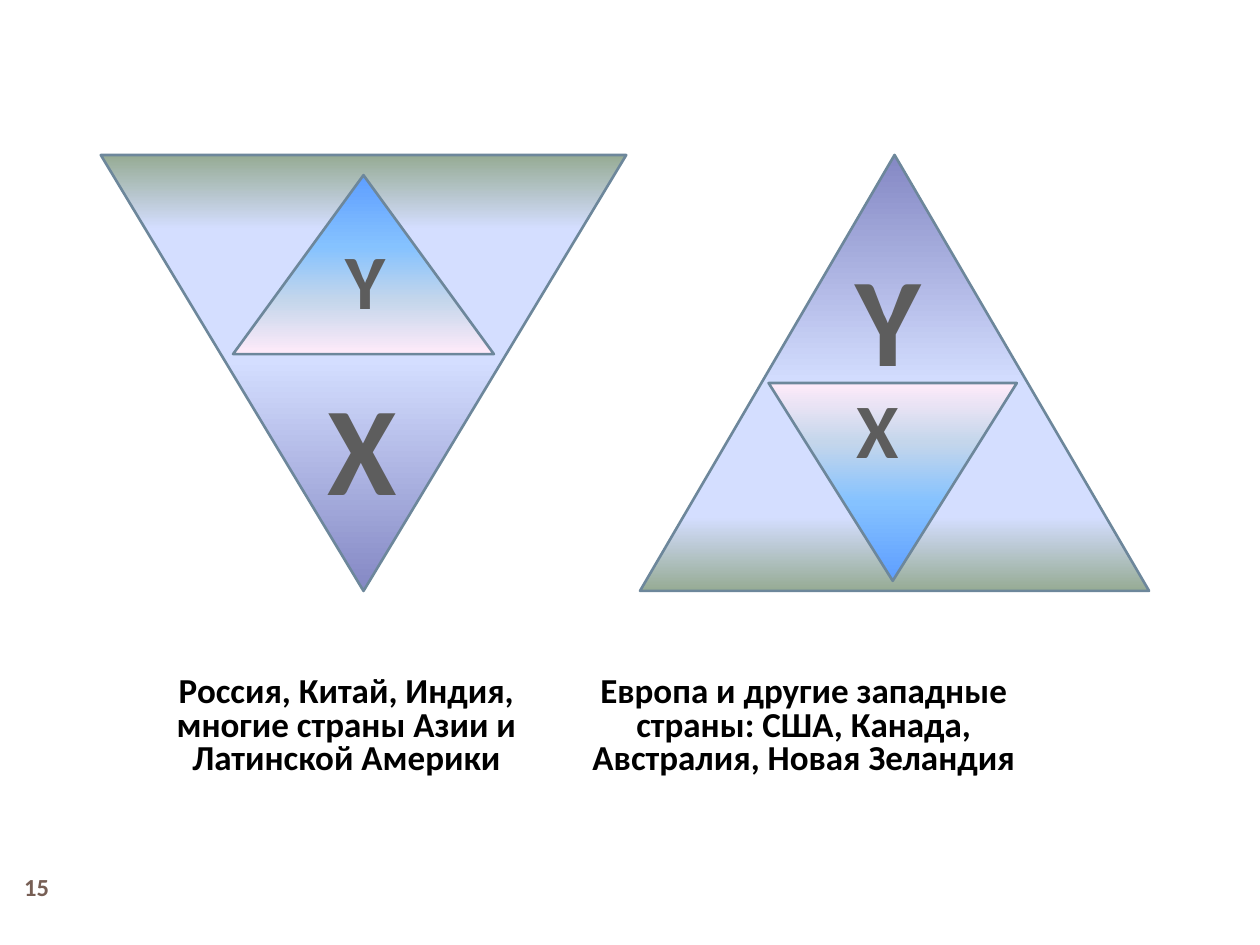
"""Build a slide comparing two pyramids of X and Y institutions."""
from lxml import etree
from pptx import Presentation
from pptx import util as u
from pptx.dml.color import RGBColor
from pptx.enum import shapes, text
from pptx.oxml.ns import qn

PX = 9144
FONT = "Calibri"
BLACK = RGBColor(0x00, 0x00, 0x00)
LETTER = RGBColor(0x5D, 0x5D, 0x5D)
OUTLINE = RGBColor(0x6D, 0x87, 0x9B)
NUMBER = RGBColor(0x77, 0x5F, 0x55)
VIOLET = RGBColor(0x84, 0x88, 0xC4)
LAVENDER = RGBColor(0xD4, 0xDE, 0xFF)
SAGE = RGBColor(0x96, 0xAB, 0x94)
BLUE = RGBColor(0x5E, 0x9E, 0xFF)
SKY = RGBColor(0x85, 0xC2, 0xFF)
MIST = RGBColor(0xC4, 0xD6, 0xEB)
PINK = RGBColor(0xFF, 0xEB, 0xFA)
OUTER_STOPS = [(0, VIOLET), (53, LAVENDER), (83, LAVENDER), (100, SAGE)]
INNER_STOPS = [(0, BLUE), (40, SKY), (70, MIST), (100, PINK)]


def emu(box):
    """Turn a box in px into EMU."""
    return [length * PX for length in box]


def inside(box, part):
    """Move a part from coordinates within a box to the page."""
    return (box[0] + part[0], box[1] + part[1], part[2], part[3])


def add_triangle(page, box, stops, inverted):
    """Draw an outlined triangle with a vertical gradient."""
    triangle = page.shapes.add_shape(shapes.MSO_SHAPE.ISOSCELES_TRIANGLE, *emu(box))
    triangle.shadow.inherit = False
    triangle.rotation = 180 if inverted else 0
    triangle.line.color.rgb = OUTLINE
    triangle.line.width = u.Pt(1.5)
    triangle.fill.gradient()
    triangle.fill.gradient_angle = 270
    stop_list = next(triangle.element.iter(qn("a:gsLst")))
    for stop in list(stop_list):
        stop_list.remove(stop)
    for percent, color in stops:
        stop = etree.SubElement(stop_list, qn("a:gs"), pos=str(percent * 1000))
        etree.SubElement(stop, qn("a:srgbClr"), val=str(color))


def add_label(page, box, lines, size, color, spacing=1.0, wrap=True,
              anchor=text.MSO_ANCHOR.TOP):
    """Write centred bold lines, one paragraph each."""
    frame = page.shapes.add_textbox(*emu(box)).text_frame
    frame.word_wrap = wrap
    frame.vertical_anchor = anchor
    frame.text = "\n".join(lines)
    for para in frame.paragraphs:
        para.alignment = text.PP_ALIGN.CENTER
        para.line_spacing = spacing
        para.font.name = FONT
        para.font.size = u.Pt(size)
        para.font.bold = True
        para.font.color.rgb = color


def add_pyramid(page, box, inverted, inner, large, small):
    """Draw a large triangle holding an opposite small one, each with its letter."""
    add_triangle(page, box, OUTER_STOPS, inverted)
    add_triangle(page, inside(box, inner), INNER_STOPS, not inverted)
    large_letter, large_box = large
    small_letter, small_box = small
    add_label(page, inside(box, large_box), [large_letter], 72, LETTER)
    add_label(page, inside(box, small_box), [small_letter], 44, LETTER, wrap=False)


def add_captions(page, box):
    """Write the country groups side by side below the pyramids."""
    left, top, width, height = box
    groups = [
        (0, 350, ["Россия, Китай, Индия,", "многие страны Азии и",
                  "Латинской Америки"]),
        (350, width - 350, ["Европа и другие западные", "страны: США, Канада,",
                            "Австралия, Новая Зеландия"]),
    ]
    for offset, column, lines in groups:
        add_label(page, (left + offset, top, column, height), lines, 20, BLACK, 0.8)


def main():
    """Build and save the deck."""
    deck = Presentation()
    deck.slide_width, deck.slide_height = emu((1000, 750))
    page = deck.slides.add_slide(deck.slide_layouts[6])
    add_pyramid(page, (80, 123, 417, 346), True, (105, 16, 207, 142),
                ("Х", (129, 165, 157, 131)), ("Y", (184, 57, 52, 84)))
    add_pyramid(page, (508, 123, 404, 346), False, (102, 181, 197, 157),
                ("Y", (126, 63, 142, 131)), ("X", (162, 175, 54, 84)))
    add_captions(page, (100, 532, 726, 91))
    add_label(page, (0, 683, 58, 42), ["15"], 14, NUMBER,
              anchor=text.MSO_ANCHOR.MIDDLE)
    deck.save("out.pptx")


if __name__ == "__main__":
    main()
